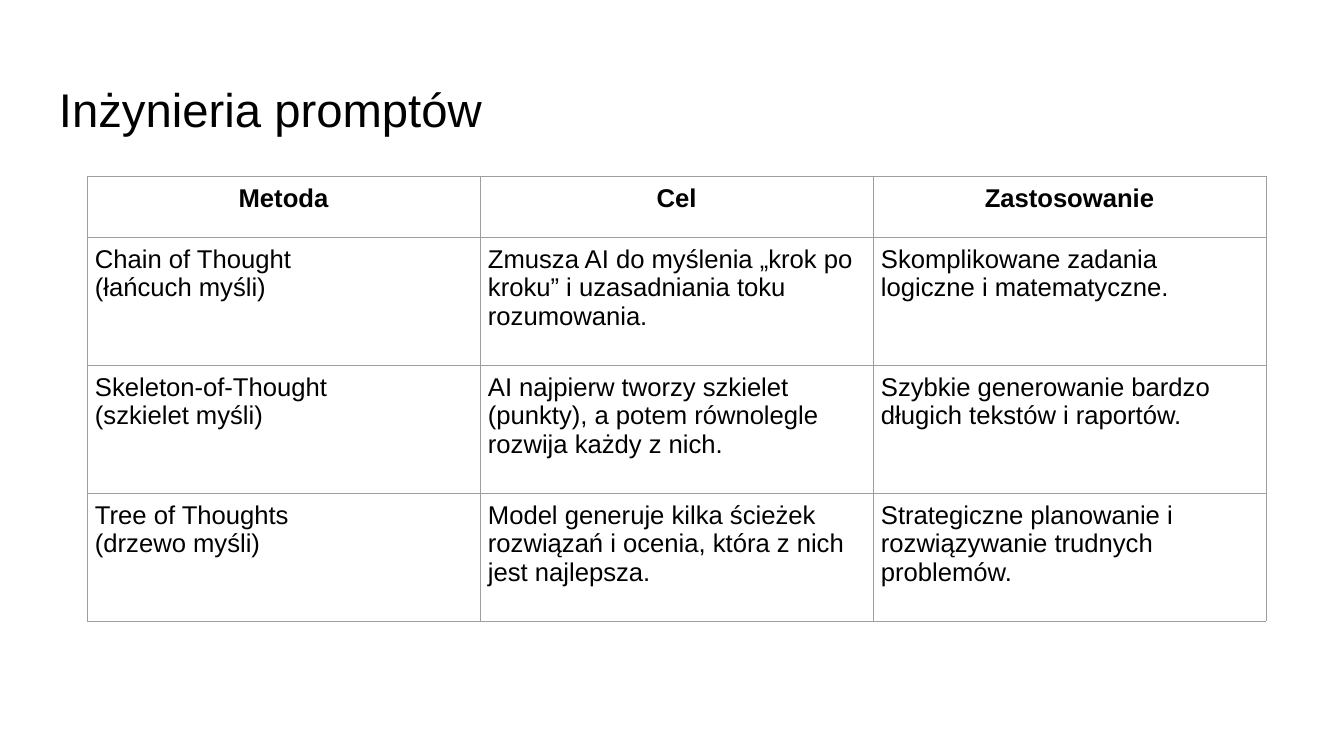
from lxml.etree import SubElement
from pptx import Presentation
from pptx.dml.color import RGBColor
from pptx.enum.text import MSO_ANCHOR, PP_ALIGN
from pptx.oxml.ns import qn
from pptx.util import Pt

PX = 914400 / 84
THEME = {
    "font": "Arial",
    "text": RGBColor(0, 0, 0),
    "border": "9E9E9E",
    "border_width": Pt(0.75),
    "title_size": Pt(40.5),
    "table_size": Pt(22),
}
METHODS = [
    ("Metoda", "Cel", "Zastosowanie"),
    ("Chain of Thought\n(łańcuch myśli)",
     "Zmusza AI do myślenia „krok po kroku” i uzasadniania toku rozumowania.",
     "Skomplikowane zadania logiczne i matematyczne."),
    ("Skeleton-of-Thought\n(szkielet myśli)",
     "AI najpierw tworzy szkielet (punkty), a potem równolegle rozwija każdy z nich.",
     "Szybkie generowanie bardzo długich tekstów i raportów."),
    ("Tree of Thoughts\n(drzewo myśli)",
     "Model generuje kilka ścieżek rozwiązań i ocenia, która z nich jest najlepsza.",
     "Strategiczne planowanie i rozwiązywanie trudnych problemów."),
]
COLUMN_WIDTH = 393
ROW_HEIGHTS = [61, 128, 128, 128]


def px(length):
    return round(length * PX)


def format_text(frame, size, bold, align):
    for paragraph in frame.paragraphs:
        paragraph.alignment = align
        for run in paragraph.runs:
            values = {"name": THEME["font"], "size": size, "bold": bold}
            for key, value in values.items():
                setattr(run.font, key, value)
            run.font.color.rgb = THEME["text"]


deck = Presentation()
deck.slide_width, deck.slide_height = px(1344), px(756)
slide = deck.slides.add_slide(deck.slide_layouts[5])

title = slide.shapes.title
title_box = {"left": 46, "top": 66, "width": 1252, "height": 84}
for side, length in title_box.items():
    setattr(title, side, px(length))
heading = title.text_frame
heading.text = "Inżynieria promptów"
heading.word_wrap = True
heading.vertical_anchor = MSO_ANCHOR.BOTTOM
for side in ("left", "right", "top", "bottom"):
    setattr(heading, f"margin_{side}", px(13))
format_text(heading, THEME["title_size"], False, PP_ALIGN.LEFT)

methods_table = slide.shapes.add_table(
    len(METHODS), len(METHODS[0]), px(87), px(176),
    px(COLUMN_WIDTH * len(METHODS[0])), px(sum(ROW_HEIGHTS))).table
methods_table.first_row = False
methods_table.horz_banding = False
for column in methods_table.columns:
    column.width = px(COLUMN_WIDTH)

for row_index, (row, texts) in enumerate(zip(methods_table.rows, METHODS)):
    row.height = px(ROW_HEIGHTS[row_index])
    is_header = row_index == 0
    for cell, text in zip(row.cells, texts):
        cell.text = text
        for side in ("left", "right", "top", "bottom"):
            setattr(cell, f"margin_{side}", px(8))
        format_text(cell.text_frame, THEME["table_size"], is_header,
                    PP_ALIGN.CENTER if is_header else PP_ALIGN.LEFT)
        properties = cell._tc.get_or_add_tcPr()
        for edge in ("a:lnL", "a:lnR", "a:lnT", "a:lnB"):
            border = SubElement(properties, qn(edge), w=str(THEME["border_width"]))
            border_fill = SubElement(border, qn("a:solidFill"))
            SubElement(border_fill, qn("a:srgbClr"), val=THEME["border"])
        cell.fill.background()

deck.save("out.pptx")
